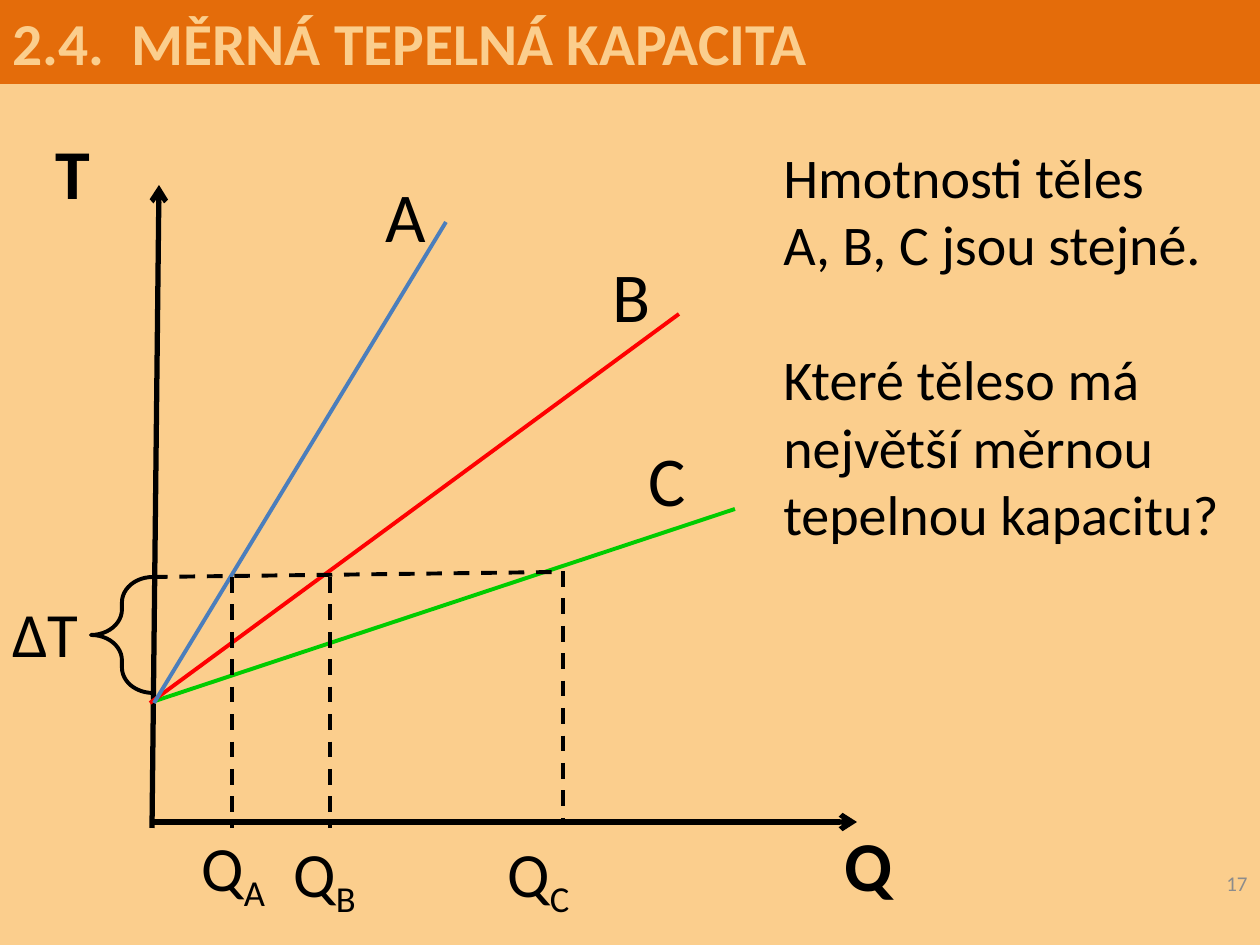
import pptx
import pptx.util
import pptx.dml.color
import pptx.enum.dml
import pptx.enum.shapes
import pptx.enum.text
import pptx.oxml
import pptx.oxml.ns

SCALE = 914400 / 126  # EMU in one px
COLORS = {
    "sand": "FBCE8D", "orange": "E46C0A", "black": "000000", "gray": "8C8C8C",
    "blue": "4B7EBC", "red": "FF0000", "green": "00CC00",
}
RGB = {name: pptx.dml.color.RGBColor.from_string(code) for name, code in COLORS.items()}
SHAPES = pptx.enum.shapes.MSO_SHAPE

deck = pptx.Presentation()
deck.slide_width, deck.slide_height = [round(n * SCALE) for n in (1260, 945)]
slide = deck.slides.add_slide(deck.slide_layouts[6])
slide.background.fill.solid()
slide.background.fill.fore_color.rgb = RGB["sand"]


def write(text, box, size, color="black", bold=False, shape=None):
    """Put text in the given shape, or in a new text box at box (px)."""
    shape = shape or slide.shapes.add_textbox(*[round(n * SCALE) for n in box])
    frame = shape.text_frame
    frame.text = text
    frame.word_wrap = True
    frame.vertical_anchor = pptx.enum.text.MSO_ANCHOR.TOP
    for para in frame.paragraphs:
        para.alignment = pptx.enum.text.PP_ALIGN.LEFT
        for run in para.runs:
            run.font.name = "Calibri"
            run.font.size = pptx.util.Pt(size)
            run.font.bold = bold
            run.font.color.rgb = RGB[color]
    return frame


def draw(ends, color="black", width=2.25, dash=False, arrow=False):
    """Draw a straight line between two points: x1, y1, x2, y2 in px."""
    line = slide.shapes.add_connector(
        pptx.enum.shapes.MSO_CONNECTOR.STRAIGHT, *[round(n * SCALE) for n in ends])
    line.line.color.rgb = RGB[color]
    line.line.width = pptx.util.Pt(width)
    if dash:
        line.line.dash_style = pptx.enum.dml.MSO_LINE.DASH
    if arrow:
        tip = pptx.oxml.parse_xml(
            '<a:tailEnd %s type="arrow"/>' % pptx.oxml.ns.nsdecls("a"))
        line.line._get_or_add_ln().append(tip)
    props = line._element.spPr
    props.append(props.makeelement(pptx.oxml.ns.qn("a:effectLst"), {}))


# Title bar
bar = slide.shapes.add_shape(
    SHAPES.RECTANGLE, *[round(n * SCALE) for n in (0, 0, 1260, 84)])
bar.shadow.inherit = False
bar.fill.solid()
bar.fill.fore_color.rgb = RGB["orange"]
bar.line.fill.background()
write("2.4.  MĚRNÁ TEPELNÁ KAPACITA", None, 34, "sand", True, bar)

# Question and slide number
quiz = write("Hmotnosti těles \vA, B, C jsou stejné.\n"
             "Které těleso má největší měrnou tepelnou kapacitu?",
             (771, 136, 489, 488), 32)
quiz.paragraphs[1].space_before = pptx.util.Pt(39)
number = write("17", (966, 858, 294, 50), 12, "gray")
number.vertical_anchor = pptx.enum.text.MSO_ANCHOR.MIDDLE
number.paragraphs[0].alignment = pptx.enum.text.PP_ALIGN.RIGHT

# Axes
draw((152, 822, 857, 822), width=3, arrow=True)
draw((152, 828, 159, 185), width=3, arrow=True)
write("Q", (832, 815, 111, 97), 40, bold=True)
write("T", (43, 123, 91, 97), 40, bold=True)

# Heating lines of the three bodies
for name, color, ends, left, top in [
    ("C", "green", (155, 701, 735, 509), 636, 430),
    ("B", "red", (150, 703, 679, 314), 600, 246),
    ("A", "blue", (154, 703, 446, 222), 373, 166),
]:
    draw(ends, color)
    write(name, (left, top, 91, 97), 40)

# Equal temperature rise and the heat each body takes
draw((152, 577, 559, 572), dash=True)
for name, x, top, low, left, base in [
    ("C", 563, 571, 822, 495, 828),
    ("B", 330, 577, 828, 281, 828),
    ("A", 232, 577, 828, 189, 822),
]:
    draw((x, top, x, low), dash=True)
    para = write("Q", (left, base, 116, 89), 36).paragraphs[0]
    sub = para.add_run()
    sub.text = name
    sub.font.name = "Calibri"
    sub.font.size = pptx.util.Pt(36)
    sub.font.color.rgb = RGB["black"]
    sub.font._element.set("baseline", "-25000")

brace = slide.shapes.add_shape(
    SHAPES.LEFT_BRACE, *[round(n * SCALE) for n in (91, 577, 62, 116)])
brace.shadow.inherit = False
brace.adjustments[0] = 0.41
brace.fill.background()
brace.line.color.rgb = RGB["black"]
brace.line.width = pptx.util.Pt(2.25)
write("∆T", (0, 588, 116, 89), 36)

deck.save("out.pptx")
